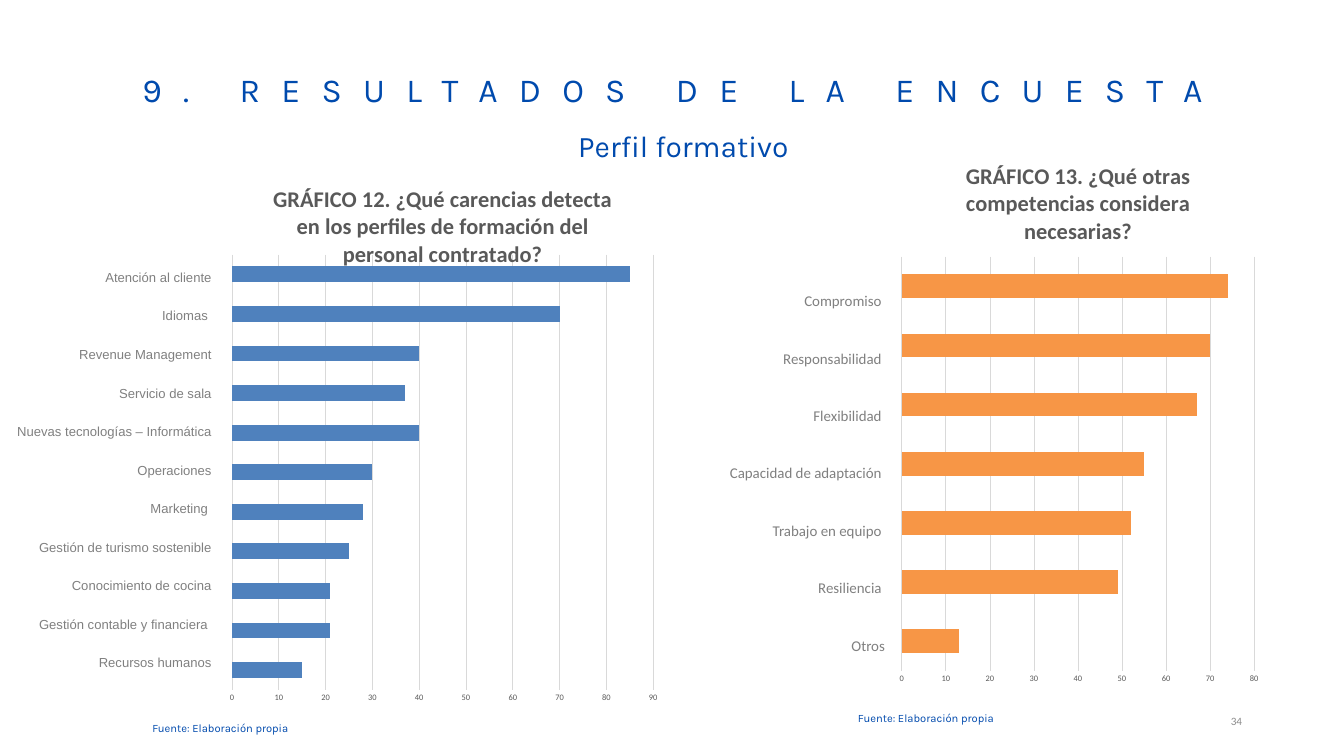
import lxml.etree
import pptx
import pptx.chart.data
import pptx.dml.color
import pptx.enum.chart
import pptx.enum.text
import pptx.oxml
import pptx.oxml.ns
import pptx.util

Cm, Pt = pptx.util.Cm, pptx.util.Pt
ALIGN = pptx.enum.text.PP_ALIGN
ANCHOR = pptx.enum.text.MSO_ANCHOR
BLUE, GREY = "004AAD", "808080"


def color(hex_string):
    return pptx.dml.color.RGBColor.from_string(hex_string)


def add_text(para, text, font="Karla", size=12, fill=BLUE, align=None, spacing=None,
             before=0, after=0, tracking=0):
    """Add a run to a paragraph; tracking is letter spacing in points."""
    span = para.add_run()
    span.text = text
    span.font.name = font
    span.font.size = Pt(size)
    span.font.color.rgb = color(fill)
    span._r.get_or_add_rPr().set("spc", str(round(tracking * 100)))
    para.alignment = align
    para.line_spacing = spacing
    para.space_before = Pt(before)
    para.space_after = Pt(after)


deck = pptx.Presentation()
deck.slide_width, deck.slide_height = Cm(50.8), Cm(28.58)
page = deck.slides.add_slide(deck.slide_layouts[5])

# Title and subtitle share one paragraph
title = page.shapes.title
title.left, title.top, title.width, title.height = Cm(3.61), Cm(1.85), Cm(44.45), Cm(4.14)
frame = title.text_frame
frame.word_wrap = True
frame.auto_size = pptx.enum.text.MSO_AUTO_SIZE.NONE
frame.vertical_anchor = ANCHOR.TOP
frame.margin_left = frame.margin_right = frame.margin_top = frame.margin_bottom = 0
for text, size, tracking in [("9. RESULTADOS DE LA ENCUESTA ", 36, 22.8),
                             ("Perfil formativo", 32, 0)]:
    add_text(frame.paragraphs[0], text, size=size, tracking=tracking,
             align=ALIGN.CENTER, spacing=1.5)

# Bar charts: place in cm, heading, values from bottom to top, axis maximum,
# bar colour, plot area as fractions of the chart
charts = [
    ((8.26, 6.25, 16.94, 20.47),
     "GRÁFICO 12. ¿Qué carencias detecta en los perfiles de formación del personal contratado?",
     [15, 21, 21, 25, 28, 30, 40, 37, 40, 70, 85], 90, "4F81BD",
     {"x": 0.03, "y": 0.165, "w": 0.94, "h": 0.804}),
    ((33.66, 5.38, 14.17, 20.88),
     "GRÁFICO 13. ¿Qué otras competencias considera necesarias?",
     [13, 49, 52, 55, 67, 70, 74], 80, "F79646",
     {"x": 0.03, "y": 0.207, "w": 0.94, "h": 0.75}),
]
for place, heading, values, maximum, fill, plot_area in charts:
    data = pptx.chart.data.CategoryChartData()
    data.categories = [str(number + 1) for number in range(len(values))]
    data.add_series("Series 1", values)
    chart = page.shapes.add_chart(pptx.enum.chart.XL_CHART_TYPE.BAR_CLUSTERED,
                                  *map(Cm, place), data).chart
    chart.font.name = "Calibri"
    chart.font.size = Pt(10)
    chart.font.color.rgb = color("000000")
    chart.has_legend = False
    chart.has_title = True
    add_text(chart.chart_title.text_frame.paragraphs[0], heading,
             font="Calibri", size=24, fill="595959")

    plot = chart.plots[0]
    plot.gap_width = 150
    plot.vary_by_categories = False
    bars = plot.series[0].format.fill
    bars.solid()
    bars.fore_color.rgb = color(fill)

    chart.category_axis.visible = False
    axis = chart.value_axis
    axis.minimum_scale, axis.maximum_scale, axis.major_unit = 0, maximum, 10
    axis.major_tick_mark = pptx.enum.chart.XL_TICK_MARK.NONE
    axis.format.line.fill.background()
    axis.tick_labels.font.name = "Calibri"
    axis.tick_labels.font.size = Pt(9)
    axis.tick_labels.font.color.rgb = color("595959")
    grid = axis.major_gridlines.format.line
    grid.color.rgb = color("D9D9D9")
    grid.width = Pt(0.75)

    area = chart._chartSpace.chart.plotArea
    for old in area.findall(pptx.oxml.ns.qn("c:layout")):
        area.remove(old)
    layout = lxml.etree.Element(pptx.oxml.ns.qn("c:layout"))
    manual = lxml.etree.SubElement(layout, pptx.oxml.ns.qn("c:manualLayout"))
    settings = {"layoutTarget": "inner", "xMode": "edge", "yMode": "edge", **plot_area}
    for name, value in settings.items():
        lxml.etree.SubElement(manual, pptx.oxml.ns.qn("c:" + name)).set("val", str(value))
    area.insert(0, layout)

# Category labels, sources and page number: place in cm, lines, format
gaps = ["Atención al cliente", "Idiomas ", "Revenue Management", "Servicio de sala",
        "Nuevas tecnologías – Informática", "Operaciones", "Marketing ",
        "Gestión de turismo sostenible", "Conocimiento de cocina",
        "Gestión contable y financiera ", "Recursos humanos"]
skills = ["Compromiso ", "Responsabilidad ", "Flexibilidad ", "Capacidad de adaptación ",
          "Trabajo en equipo ", "Resiliencia ", "Otros"]
source = ["Fuente: Elaboración propia"]
texts = [
    ((-0.84, 10.06, 9.09, 15.67), gaps,
     dict(font="Arial", size=14, fill=GREY, align=ALIGN.RIGHT, after=24.5)),
    ((27.15, 9.55, 6.55, 17.15), skills,
     dict(font="Calibri", size=16, fill=GREY, align=ALIGN.RIGHT, spacing=3.0, before=4)),
    ((5.51, 27.13, 8.46, 0.76), source, {}),
    ((32.18, 26.75, 8.46, 0.76), source, {}),
    ((41.28, 26.75, 5.92, 1.02), ["34"],
     dict(font="Calibri", fill="8C8C8C", align=ALIGN.RIGHT)),
]
for place, lines, style in texts:
    box = page.shapes.add_textbox(*map(Cm, place))
    frame = box.text_frame
    frame.word_wrap = True
    frame.vertical_anchor = ANCHOR.MIDDLE if lines == ["34"] else ANCHOR.TOP
    for index, line in enumerate(lines):
        para = frame.add_paragraph() if index else frame.paragraphs[0]
        add_text(para, line, **style)

deck.save("out.pptx")
